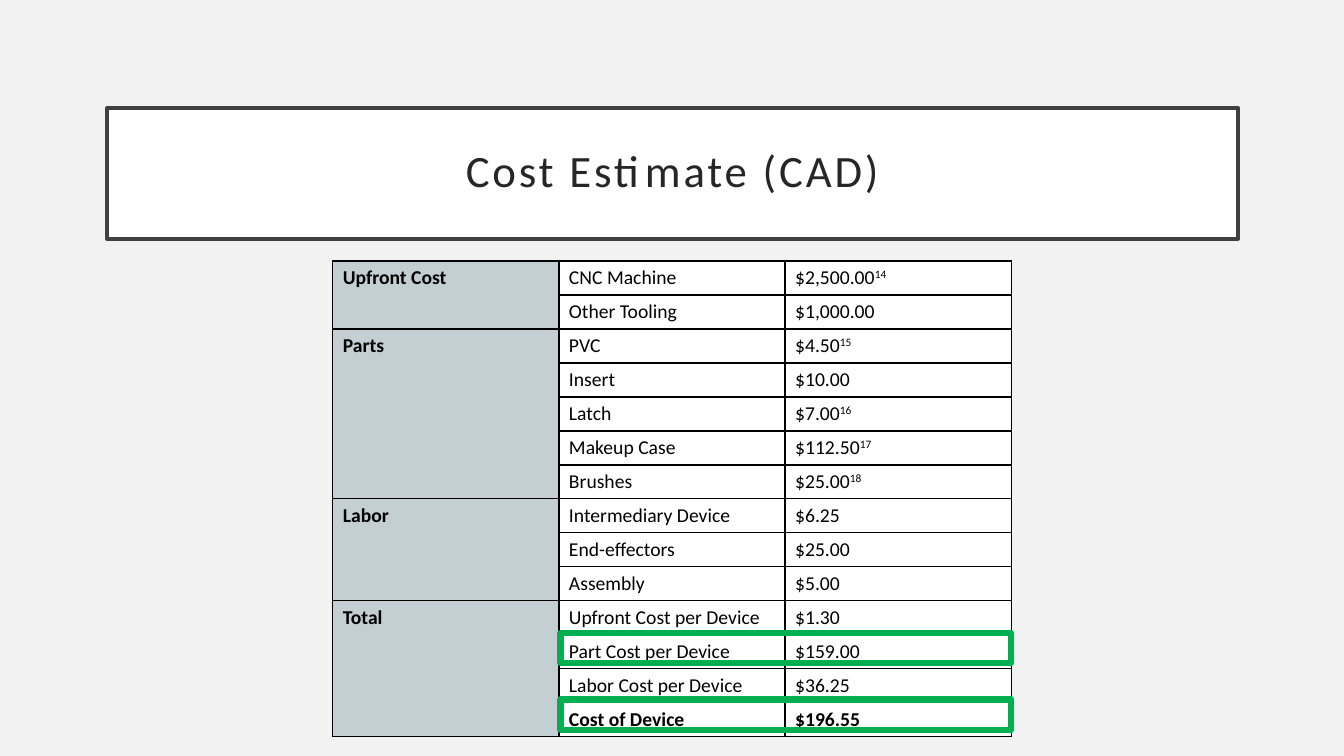
from pptx import Presentation
from pptx import util as u
from pptx.dml.color import RGBColor
from pptx.enum import shapes, text
from pptx.oxml import parse_xml
from pptx.oxml.ns import nsdecls

HUES = {"back": "F2F2F2", "white": "FFFFFF", "edge": "404040", "title": "262626",
        "ink": "000000", "group": "C3CFD3", "mark": "00B050"}

COSTS = {
    "Upfront Cost": [("CNC Machine", "$2,500.00", "14"), ("Other Tooling", "$1,000.00", "")],
    "Parts": [("PVC", "$4.50", "15"), ("Insert", "$10.00", ""), ("Latch", "$7.00", "16"),
              ("Makeup Case", "$112.50", "17"), ("Brushes", "$25.00", "18")],
    "Labor": [("Intermediary Device", "$6.25", ""), ("End-effectors", "$25.00", ""),
              ("Assembly", "$5.00", "")],
    "Total": [("Upfront Cost per Device", "$1.30", ""), ("Part Cost per Device", "$159.00", ""),
              ("Labor Cost per Device", "$36.25", ""), ("Cost of Device", "$196.55", "")],
}


class Deck:
    """Holds the style and the current slide, and draws each kind of element."""

    def __init__(self):
        self.show = Presentation()
        self.show.slide_width = u.Inches(13.33)
        self.show.slide_height = u.Inches(7.5)
        self.slide = self.show.slides.add_slide(self.show.slide_layouts[5])
        self.fill(self.slide.background.fill, "back")

    def fill(self, fill, hue):
        fill.solid()
        fill.fore_color.rgb = RGBColor.from_string(HUES[hue])

    def line(self, shape, hue, width):
        self.fill(shape.line.fill, hue)
        shape.line.width = u.Pt(width)

    def put(self, item, form):
        for key, value in form.items():
            setattr(item, key, value)

    def run(self, para, words, hue, size, bold=False):
        run = para.add_run()
        run.text = words
        self.put(run.font, {"name": "Calibri", "size": u.Pt(size), "bold": bold})
        run.font.color.rgb = RGBColor.from_string(HUES[hue])
        return run.font._element

    def title(self, words, left, top, width, height):
        shape = self.slide.shapes.title
        self.put(shape, {"left": u.Inches(left), "top": u.Inches(top),
                         "width": u.Inches(width), "height": u.Inches(height)})
        self.fill(shape.fill, "white")
        self.line(shape, "edge", 2.5)
        frame = shape.text_frame
        pad = u.Inches(0.2)
        self.put(frame, {"margin_left": pad, "margin_right": pad, "margin_top": pad,
                         "margin_bottom": pad, "word_wrap": True,
                         "auto_size": text.MSO_AUTO_SIZE.NONE,
                         "vertical_anchor": text.MSO_ANCHOR.MIDDLE})
        para = frame.paragraphs[0]
        self.put(para, {"alignment": text.PP_ALIGN.CENTER, "line_spacing": 0.9})
        self.run(para, words, "title", 32).set("spc", "200")

    def cell(self, cell, words, hue, bold=False, note=""):
        para = cell.text_frame.paragraphs[0]
        if words:
            self.run(para, words, "ink", 14, bold)
        if note:
            self.run(para, note, "ink", 14, bold).set("baseline", "30000")
        self.fill(cell.fill, hue)
        props = cell._tc.get_or_add_tcPr()
        for spot, side in enumerate("LRTB"):
            props.insert(spot, parse_xml(
                f'<a:ln{side} {nsdecls("a")} w="12700"><a:solidFill>'
                f'<a:srgbClr val="{HUES["ink"]}"/></a:solidFill></a:ln{side}>'))

    def table(self, groups, left, top, width, height):
        count = sum(len(items) for items in groups.values())
        grid = self.slide.shapes.add_table(
            count, 3, u.Inches(left), u.Inches(top), u.Inches(width), u.Inches(height)).table
        self.put(grid, {"first_row": False, "horz_banding": False})
        row = 0
        for name, items in groups.items():
            first = row
            for label, price, note in items:
                last = row == count - 1
                self.cell(grid.cell(row, 0), name if row == first else "", "group", True)
                self.cell(grid.cell(row, 1), label, "white", last)
                self.cell(grid.cell(row, 2), price, "white", last, note)
                row += 1
            grid.cell(first, 0).merge(grid.cell(row - 1, 0))

    def frame(self, left, top, width, height):
        shape = self.slide.shapes.add_shape(
            shapes.MSO_SHAPE.RECTANGLE, u.Inches(left), u.Inches(top),
            u.Inches(width), u.Inches(height))
        shape.shadow.inherit = False
        shape.fill.background()
        self.line(shape, "mark", 4.5)


def main():
    deck = Deck()
    deck.title("Cost Estimate (CAD)", 1.06, 1.07, 11.22, 1.3)
    deck.table(COSTS, 3.3, 2.59, 6.73, 4.67)
    for top in (6.28, 6.94):
        deck.frame(5.56, top, 4.47, 0.3)
    deck.show.save("out.pptx")


if __name__ == "__main__":
    main()
